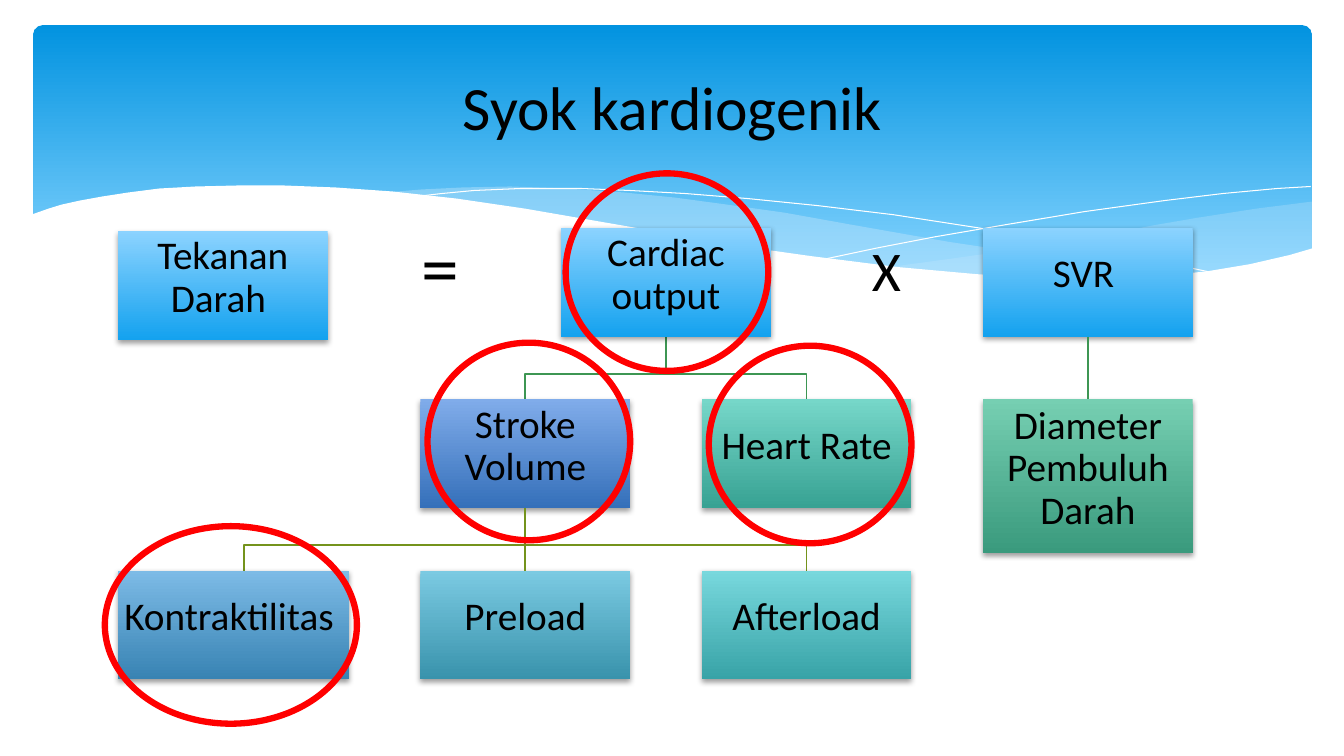
from dataclasses import dataclass

from lxml.etree import SubElement
from pptx import Presentation
from pptx.dml.color import RGBColor
from pptx.enum.shapes import MSO_CONNECTOR as CONN, MSO_SHAPE as SHAPE
from pptx.enum.text import MSO_ANCHOR as ANCHOR, PP_ALIGN as ALIGN
from pptx.oxml.ns import qn
from pptx.util import Inches, Pt


@dataclass(frozen=True)
class Theme:
    font: str = "Calibri"
    title: int = 44
    body: int = 28
    equals: int = 54
    times: int = 40
    text: str = "000000"
    white: str = "FFFFFF"
    ring: str = "FF0000"
    wave: str = "C6E7FC"
    banner: tuple = ("0293E0", "83D3FE")
    top: tuple = ("8CD3FF", "14A2EF")
    output_line: str = "3D9653"
    stroke_line: str = "74931C"


T = Theme()
W, H = 13.33, 7.5

# Chart grid: column centres and row tops
COL0, COL_STEP = 2.42, 2.79
ROW0, ROW_STEP = 2.26, 1.7
BOX_W, BOX_H = 2.08, 1.08
ELBOW_DROP = 0.37

# Banner outlines, as x, y points
RIGHT_WAVE = [(13.01, 2), (12.46, 2.07), (11.88, 2.16), (11.47, 2.23), (10.73, 2.37),
              (10.05, 2.48), (9.41, 2.57), (8.82, 2.65), (9.4, 2.71), (9.93, 2.75),
              (10.41, 2.77), (10.85, 2.78), (11.26, 2.77), (11.74, 2.73), (12.18, 2.67),
              (12.57, 2.59), (13.01, 2.47)]
MIDDLE_WAVE = [(11.9, 2.73), (11.16, 2.65), (10.34, 2.54), (9.41, 2.4), (8.39, 2.22),
               (7.78, 2.11), (7.21, 2.03), (6.69, 1.96), (6.19, 1.91), (5.6, 1.87),
               (5.06, 1.85), (4.59, 1.86), (4.18, 1.88), (3.82, 1.91), (4.56, 1.99),
               (5.11, 2.07), (5.69, 2.16), (6.54, 2.32), (7.55, 2.48), (8.24, 2.58),
               (8.87, 2.66), (9.45, 2.72), (9.98, 2.76), (10.46, 2.78), (10.9, 2.78),
               (11.43, 2.77)]
FALLING_LINE = [(4.12, 1.95), (4.38, 1.92), (4.7, 1.89), (5.16, 1.87), (5.77, 1.87),
                (6.25, 1.89), (6.8, 1.92), (7.42, 1.97), (8.11, 2.04), (8.86, 2.13),
                (9.7, 2.26), (10.6, 2.41), (11.58, 2.61), (12.1, 2.72)]
RISING_LINE = [(8.18, 2.57), (8.7, 2.46), (9.27, 2.35), (9.97, 2.23), (10.75, 2.1),
               (11.55, 1.99), (12.13, 1.92), (12.67, 1.87), (13, 1.85)]
WHITE_WAVE = [(13.03, 2.46), (12.79, 2.53), (12.4, 2.62), (11.98, 2.69), (11.51, 2.74),
              (10.97, 2.77), (10.37, 2.76), (9.69, 2.72), (8.91, 2.65), (8.04, 2.54),
              (7.4, 2.45), (6.71, 2.33), (5.96, 2.2), (5.21, 2.07), (4.53, 1.97),
              (3.9, 1.9), (3.33, 1.86), (2.82, 1.84), (2.35, 1.84), (1.94, 1.85),
              (1.58, 1.87), (1.27, 1.91), (1.01, 1.95), (0.79, 1.99), (0.61, 2.03),
              (0.48, 2.07), (0.31, 2.13), (0.31, 3.29), (13.03, 3.29)]


def rgb(code):
    return RGBColor.from_string(code)


def write(tf, text, size=T.body, align=ALIGN.CENTER, anchor=ANCHOR.MIDDLE, spacing=None):
    tf.word_wrap = True
    tf.vertical_anchor = anchor
    p = tf.paragraphs[0]
    p.alignment = align
    p.line_spacing = spacing
    r = p.add_run()
    r.text = text
    r.font.name, r.font.size = T.font, Pt(size)
    r.font.color.rgb = rgb(T.text)


def label(s, box, text, **fmt):
    write(s.shapes.add_textbox(*map(Inches, box)).text_frame, text, **fmt)


def preset(s, kind, box):
    sp = s.shapes.add_shape(kind, *map(Inches, box))
    sp.shadow.inherit = False
    return sp


def shade(sp, colors, end=1.0):
    sp.fill.gradient()
    sp.fill.gradient_angle = 270
    for stop, color, at in zip(sp.fill.gradient_stops, colors, (0, end)):
        stop.color.rgb, stop.position = rgb(color), at
    sp.line.fill.background()


def outline(s, points, fill=None, alpha=100, line=None, width=0):
    # The builder rounds to whole units, so points go in as EMU
    start, *rest = [(Inches(x), Inches(y)) for x, y in points]
    fb = s.shapes.build_freeform(*start)
    fb.add_line_segments(rest, close=fill is not None)
    sp = fb.convert_to_shape()
    sp.shadow.inherit = False
    if fill:
        sp.fill.solid()
        sp.fill.fore_color.rgb = rgb(fill)
        color = sp._element.spPr.find(qn("a:solidFill"))[0]
        SubElement(color, qn("a:alpha"), val=str(alpha * 1000))
    else:
        sp.fill.background()
    if line:
        sp.line.color.rgb, sp.line.width = rgb(line), Pt(width)
    else:
        sp.line.fill.background()


def banner(s, box):
    sp = preset(s, SHAPE.ROUNDED_RECTANGLE, box)
    sp.adjustments[0] = 0.034
    shade(sp, T.banner, end=0.9)
    outline(s, RIGHT_WAVE, fill=T.wave, alpha=29)
    outline(s, MIDDLE_WAVE, fill=T.wave, alpha=40)
    outline(s, FALLING_LINE, line=T.white)
    outline(s, RISING_LINE, line=T.white)
    outline(s, WHITE_WAVE, fill=T.white)


def node(s, box, text, colors):
    sp = preset(s, SHAPE.RECTANGLE, box)
    shade(sp, colors)
    shadow = SubElement(sp._element.spPr.find(qn("a:effectLst")), qn("a:outerShdw"),
                        blurRad=str(Pt(4)), dist=str(Pt(2)), dir="5400000", rotWithShape="0")
    color = SubElement(shadow, qn("a:srgbClr"), val="000000")
    SubElement(color, qn("a:alpha"), val="38000")
    tf = sp.text_frame
    tf.margin_left = tf.margin_right = tf.margin_top = Inches(0.01)
    tf.margin_bottom = Inches(0.15)
    write(tf, text, spacing=0.9)
    return sp


def cell(col, row, height=BOX_H):
    return (COL0 + col * COL_STEP - BOX_W / 2, ROW0 + row * ROW_STEP, BOX_W, height)


def straight(s, parent, child, color):
    c = s.shapes.add_connector(CONN.STRAIGHT, 0, 0, 0, 0)
    c.begin_connect(parent, 2)
    c.end_connect(child, 0)
    c.line.color.rgb, c.line.width = rgb(color), Pt(1.25)
    SubElement(c._element.spPr, qn("a:effectLst"))


def elbow(s, col, row, child_col, color):
    x, child_x = (COL0 + c * COL_STEP for c in (col, child_col))
    y = ROW0 + row * ROW_STEP + BOX_H
    bend, end = y + ELBOW_DROP, ROW0 + (row + 1) * ROW_STEP
    outline(s, [(x, y), (x, bend), (child_x, bend), (child_x, end)], line=color, width=1.25)


def pressure_tree(s):
    # Branching lines
    for child_col in (2, 1):
        elbow(s, 1.5, 0, child_col, T.output_line)
    for child_col in (2, 0):
        elbow(s, 1, 1, child_col, T.stroke_line)

    # Boxes
    left = 1.17
    node(s, (left, 2.29, BOX_W, BOX_H), "Tekanan Darah ", T.top)
    node(s, cell(1.5, 0), "Cardiac output", T.top)
    stroke = node(s, cell(1, 1), "Stroke Volume", ("80ACEA", "3570BA"))
    node(s, (left, ROW0 + 2 * ROW_STEP, 2.29, BOX_H), "Kontraktilitas ", ("7DBBE6", "3883B3"))
    preload = node(s, cell(1, 2), "Preload", ("7BCAE2", "3993AC"))
    node(s, cell(2, 2), "Afterload", ("78D8DD", "38A3A7"))
    node(s, cell(2, 1), "Heart Rate", ("76D7C9", "38A293"))
    svr = node(s, cell(3, 0), "SVR ", T.top)
    diameter = node(s, cell(3, 1, 1.53), "Diameter Pembuluh Darah", ("76CFB2", "3A9A7D"))
    straight(s, stroke, preload, T.stroke_line)
    straight(s, svr, diameter, T.output_line)

    # Operators of the equation
    sign = dict(align=ALIGN.LEFT, anchor=ANCHOR.TOP)
    label(s, (4.08, 2.13, 0.78, 1.01), "=", size=T.equals, **sign)
    label(s, (8.55, 2.29, 0.64, 0.77), "X", size=T.times, **sign)


def rings(s):
    for x, y, w in ((5.61, 1.72, 2.01), (4.24, 3.4, 2.01), (1.04, 5.22, 2.5), (7.03, 3.43, 2.01)):
        sp = preset(s, SHAPE.OVAL, (x, y, w, 1.96))
        sp.fill.background()
        sp.line.color.rgb, sp.line.width = rgb(T.ring), Pt(4.5)


def main():
    prs = Presentation()
    prs.slide_width, prs.slide_height = Inches(W), Inches(H)
    s = prs.slides.add_slide(prs.slide_layouts[6])
    banner(s, (0.33, 0.25, 12.68, 2.7))
    label(s, (0.67, 0.37, 12, 1.37), "Syok kardiogenik", size=T.title)
    pressure_tree(s)
    rings(s)
    prs.save("out.pptx")


if __name__ == "__main__":
    main()
